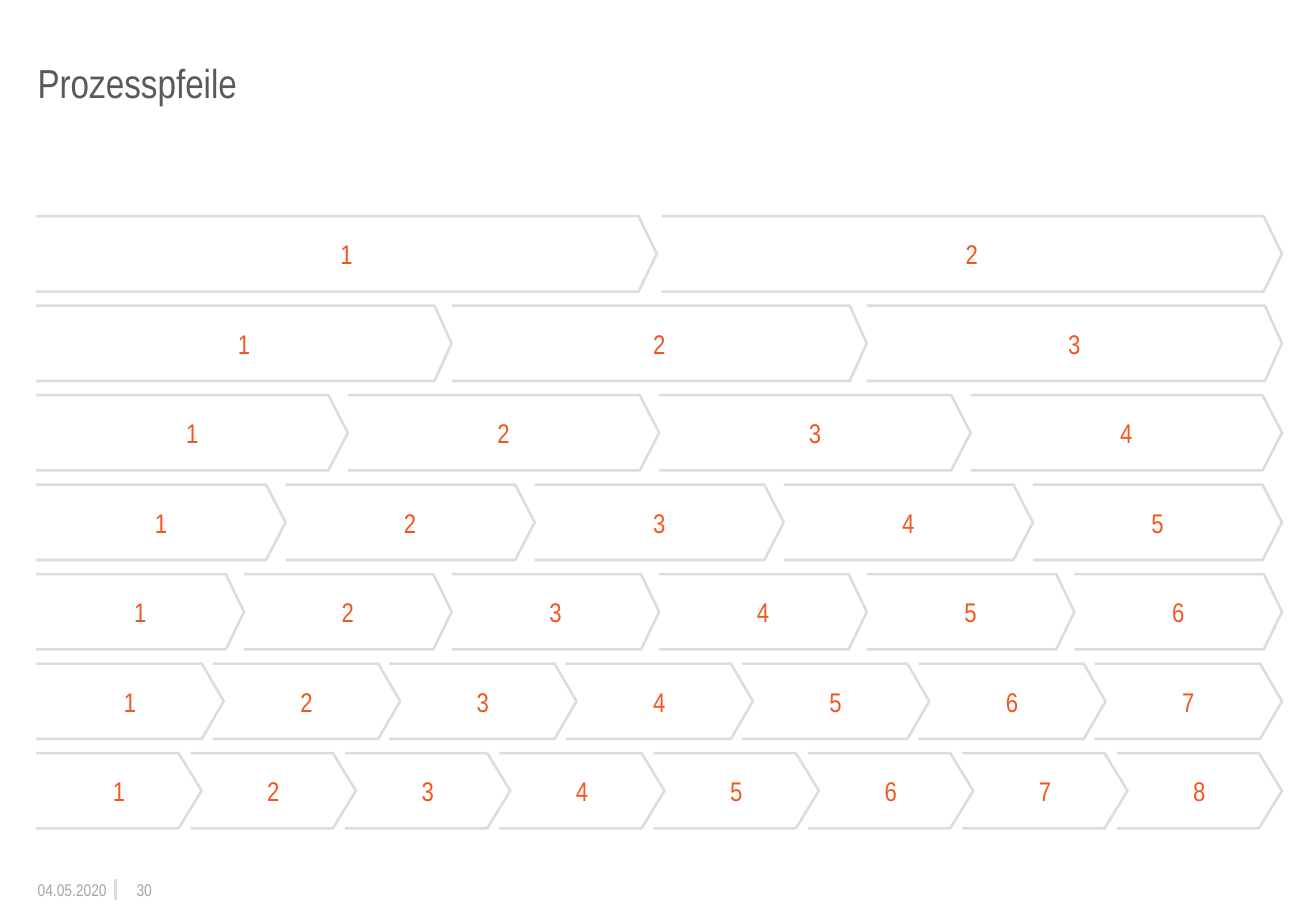
from pptx import Presentation
from pptx.dml.color import RGBColor
from pptx.enum.shapes import MSO_CONNECTOR as CONN
from pptx.enum.text import MSO_ANCHOR as ANCHOR, PP_ALIGN as ALIGN
from pptx.oxml.ns import qn
from pptx.util import Emu, Inches, Pt
from lxml.etree import SubElement

# Content: one row of arrows per tuple (number of arrows, gap, tip depth)
TITLE, DATE, PAGE = "Prozesspfeile", "04.05.2020", "30"
ROWS = [
    (2, 0.04, 0.15),
    (3, 0, 0.14),
    (4, 0, 0.16),
    (5, 0, 0.16),
    (6, 0, 0.15),
    (7, -0.09, 0.18),
    (8, -0.09, 0.19),
]

# Layout in inches
SLIDE_W, SLIDE_H = 10.83, 7.5
LEFT, RIGHT, TOP, BOTTOM = 0.3, 10.55, 1.78, 6.82
ARROW_H = 0.62
PITCH = (BOTTOM - TOP - ARROW_H) / (len(ROWS) - 1)
FOOT_Y, FOOT_H = 7.24, 0.17
FONT = "Arial Narrow"
GREY, ORANGE, DARK, PALE = "DCDCDC", "F35620", "595959", "A5A5A5"


def rgb(value):
    return RGBColor.from_string(value)


def write(sp, text, size, color, align, anchor, inset=0.0, bottom=0.0, wrap=True):
    tf = sp.text_frame
    tf.text = text
    tf.word_wrap = wrap
    tf.vertical_anchor = anchor
    tf.margin_left = tf.margin_right = tf.margin_top = Inches(inset)
    tf.margin_bottom = Inches(bottom or inset)
    p = tf.paragraphs[0]
    p.alignment = align
    font = p.runs[0].font
    font.name, font.size = FONT, Pt(size)
    font.color.rgb = rgb(color)
    return p


def text_box(slide, x, y, w, h):
    return slide.shapes.add_textbox(Inches(x), Inches(y), Inches(w), Inches(h))


def arrow(slide, x, y, w, tip, label):
    def point(dx, dy):
        return Inches(x + dx), Inches(y + dy)

    outline = slide.shapes.build_freeform(*point(0, 0))
    outline.add_line_segments(
        [point(w - tip, 0), point(w, ARROW_H / 2), point(w - tip, ARROW_H), point(0, ARROW_H)],
        close=False)
    sp = outline.convert_to_shape()
    sp.shadow.inherit = False
    sp.fill.background()
    sp.line.color.rgb = rgb(GREY)
    sp.line.width = Pt(1.5)
    write(sp, label, 16, ORANGE, ALIGN.CENTER, ANCHOR.MIDDLE, inset=0.08)


def main():
    prs = Presentation()
    prs.slide_width, prs.slide_height = Inches(SLIDE_W), Inches(SLIDE_H)
    slide = prs.slides.add_slide(prs.slide_layouts[6])

    # Title
    p = write(text_box(slide, 0.31, 0.52, 10.24, 0.73), TITLE, 24, DARK,
              ALIGN.LEFT, ANCHOR.TOP, bottom=0.12)
    p.line_spacing = 0.9

    # Process arrows
    for row, (count, gap, tip) in enumerate(ROWS):
        w = (RIGHT - LEFT - gap * (count - 1)) / count
        for col in range(count):
            arrow(slide, LEFT + col * (w + gap), TOP + row * PITCH, w, tip, str(col + 1))

    # Footer: date, divider, page number
    write(text_box(slide, 0.31, FOOT_Y, 0.57, FOOT_H), DATE, 10, PALE,
          ALIGN.LEFT, ANCHOR.MIDDLE, wrap=False)
    write(text_box(slide, 1.02, FOOT_Y, 0.23, FOOT_H), PAGE, 10, PALE,
          ALIGN.RIGHT, ANCHOR.MIDDLE, wrap=False)
    divider = slide.shapes.add_connector(
        CONN.STRAIGHT, Inches(0.95), Inches(FOOT_Y), Inches(0.95), Inches(FOOT_Y + FOOT_H))
    divider.line.color.rgb = rgb(GREY)
    divider.line.width = Pt(2)
    SubElement(divider._element.spPr, qn("a:effectLst"))

    prs.save("out.pptx")


if __name__ == "__main__":
    main()
